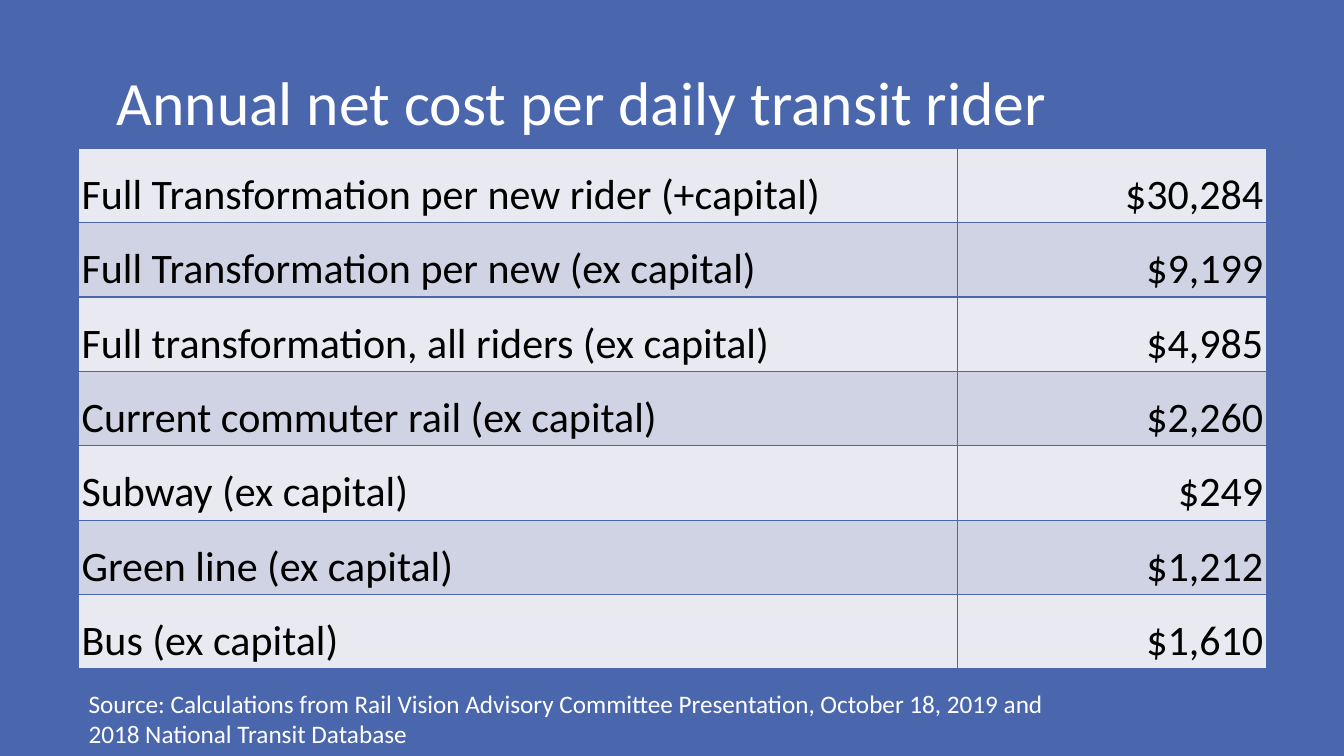
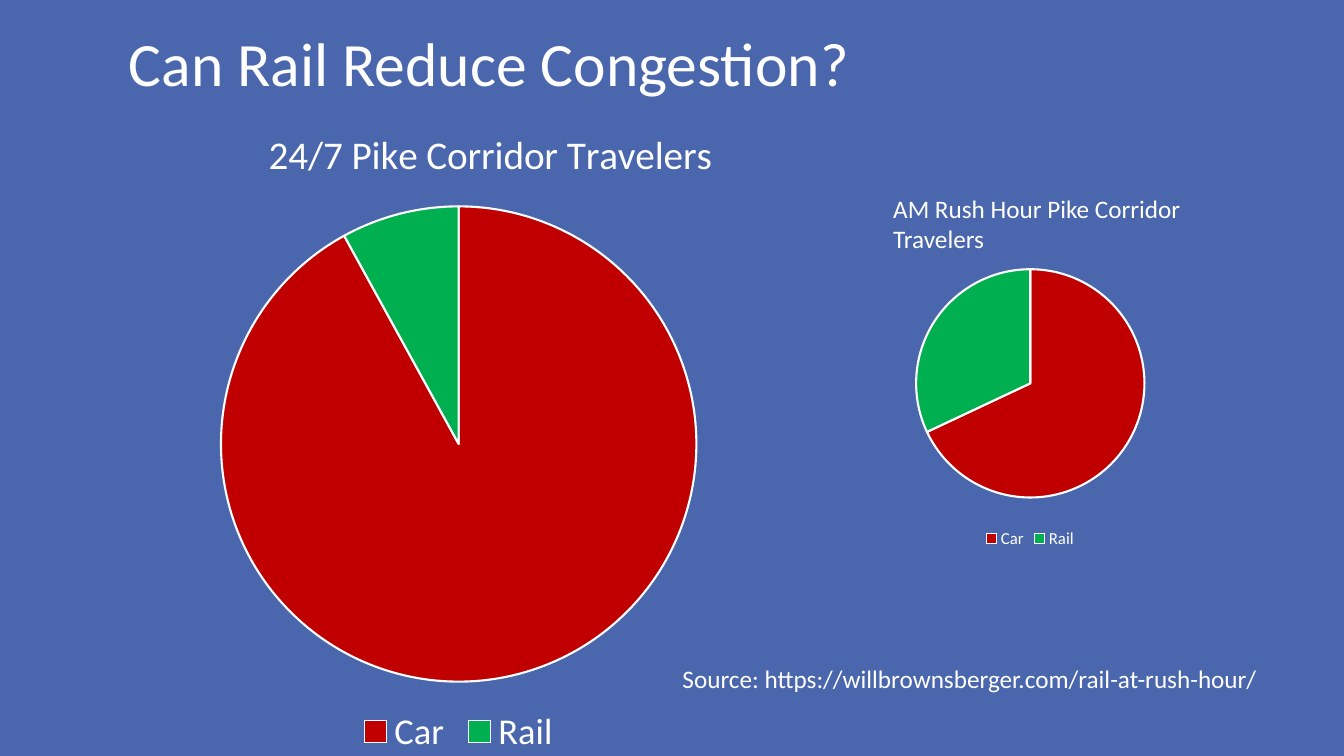
from lxml import etree
from pptx import Presentation, util as u
from pptx.chart import data
from pptx.dml.color import RGBColor
from pptx.enum import chart as ce, text
from pptx.oxml import ns

BLUE = RGBColor(0x4A, 0x66, 0xAC)
WHITE = RGBColor(0xFF, 0xFF, 0xFF)
BLACK = RGBColor(0, 0, 0)
RED = RGBColor(0xC0, 0, 0)
GREEN = RGBColor(0, 0xB0, 0x50)
BANDS = RGBColor(0xE9, 0xEA, 0xF1), RGBColor(0xD0, 0xD3, 0xE3)
FONT = "Calibri"
WIDE, HIGH = u.Inches(13.33), u.Inches(7.5)

COSTS = [
    ("Full Transformation per new rider (+capital)", "$30,284"),
    ("Full Transformation per new (ex capital)", "$9,199"),
    ("Full transformation, all riders (ex capital)", "$4,985"),
    ("Current commuter rail (ex capital)", "$2,260"),
    ("Subway (ex capital)", "$249"),
    ("Green line (ex capital)", "$1,212"),
    ("Bus (ex capital)", "$1,610"),
]


def place(x, y, w, h):
    """Turn percentages of the slide into lengths."""
    return [int(n * full / 100) for n, full in zip((x, y, w, h), (WIDE, HIGH) * 2)]


def style(font, size, color=WHITE):
    font.name, font.size = FONT, u.Pt(size)
    font.color.rgb = color


def label(slide, box, lines, size=18, wrap=True):
    frame = slide.shapes.add_textbox(*place(*box)).text_frame
    frame.word_wrap = wrap
    frame.text = lines
    for para in frame.paragraphs:
        style(para.font, size)
    return frame


def title(slide, x, y, words):
    frame = label(slide, (x, y, 86.27, 19.33), words, 44)
    frame.vertical_anchor = text.MSO_ANCHOR.MIDDLE
    frame.paragraphs[0].line_spacing = 0.9


def border(cell, color):
    props = cell._tc.get_or_add_tcPr()
    for side in "LRTB":
        line = etree.SubElement(props, ns.qn(f"a:ln{side}"), w=str(u.Pt(1)))
        fill = etree.SubElement(line, ns.qn("a:solidFill"))
        etree.SubElement(fill, ns.qn("a:srgbClr"), val=str(color))


def cost_table(slide, box):
    x, y, w, h = place(*box)
    grid = slide.shapes.add_table(len(COSTS), 2, x, y, w, h).table
    grid.first_row = False
    for col, share in zip(grid.columns, (0.74, 0.26)):
        col.width = int(w * share)
    for r, row in enumerate(COSTS):
        for c, words in enumerate(row):
            cell = grid.cell(r, c)
            border(cell, BLUE)
            cell.fill.solid()
            cell.fill.fore_color.rgb = BANDS[r % 2]
            cell.margin_left = cell.margin_right = u.Inches(0.03)
            cell.margin_top = cell.margin_bottom = u.Inches(0.02)
            cell.vertical_anchor = text.MSO_ANCHOR.BOTTOM
            cell.text = words
            para = cell.text_frame.paragraphs[0]
            para.alignment = text.PP_ALIGN.RIGHT if c else text.PP_ALIGN.LEFT
            style(para.font, 30, BLACK)


def layout(parent, index, **shares):
    """Fix a chart part at shares of the chart's own box."""
    for old in parent.findall(ns.qn("c:layout")):
        parent.remove(old)
    node = etree.Element(ns.qn("c:layout"))
    parent.insert(index, node)
    manual = etree.SubElement(node, ns.qn("c:manualLayout"))
    if "w" in shares:
        etree.SubElement(manual, ns.qn("c:layoutTarget"), val="inner")
    for key in "xy":
        etree.SubElement(manual, ns.qn(f"c:{key}Mode"), val="edge")
    for key, share in shares.items():
        etree.SubElement(manual, ns.qn(f"c:{key}"), val=str(share))


def pie(slide, box, values, size, plot, head=None):
    info = data.CategoryChartData()
    info.categories = ["Car", "Rail"]
    info.add_series("Series 1", values)
    chart = slide.shapes.add_chart(ce.XL_CHART_TYPE.PIE, *place(*box), info).chart
    style(chart.font, 10)
    # Heading
    chart.has_title = bool(head)
    if head:
        frame = chart.chart_title.text_frame
        frame.text = head
        font = frame.paragraphs[0].runs[0].font
        style(font, 28)
        font.bold = False
        layout(chart.chart_title.element, 1, x=0.21, y=0.03)
    # Legend
    chart.has_legend = True
    chart.legend.position = ce.XL_LEGEND_POSITION.BOTTOM
    chart.legend.include_in_layout = False
    style(chart.legend.font, size)
    # Wedges
    chart.plots[0].vary_by_categories = True
    for i, color in enumerate((RED, GREEN)):
        part = chart.plots[0].series[0].points[i].format
        part.fill.solid()
        part.fill.fore_color.rgb = color
        part.line.color.rgb = WHITE
        part.line.width = u.Pt(1.5)
    layout(chart.element.find(".//" + ns.qn("c:plotArea")), 0, **plot)


def cost_slide(slide):
    title(slide, 7.95, 4.27, "Annual net cost per daily transit rider")
    label(slide, (5.85, 90.4, 73.8, 9.47),
          "Source: Calculations from Rail Vision Advisory Committee Presentation, "
          "October 18, 2019 and\n2018 National Transit Database", wrap=False)
    cost_table(slide, (5.85, 19.6, 88.37, 68.93))


def rail_slide(slide):
    title(slide, 8.85, -0.8, "Can Rail Reduce Congestion?")
    pie(slide, (8.85, 13.33, 50.56, 87.33), (92, 8), 26,
        dict(x=0.15, y=0.16, w=0.7, h=0.72), "24/7 Pike Corridor Travelers")
    pie(slide, (67.14, 32.8, 19.05, 40.27), (68, 32), 12,
        dict(x=0.05, y=0.07, w=0.9, h=0.75))
    label(slide, (65.72, 24.93, 27.31, 9.47), "AM Rush Hour Pike Corridor Travelers")
    label(slide, (50.04, 87.07, 47.26, 5.33),
          "Source: https://willbrownsberger.com/rail-at-rush-hour/")


def main():
    deck = Presentation()
    deck.slide_width, deck.slide_height = WIDE, HIGH
    back = deck.slide_master.background.fill
    back.solid()
    back.fore_color.rgb = BLUE
    for build in (cost_slide, rail_slide):
        build(deck.slides.add_slide(deck.slide_layouts[6]))
    deck.save("out.pptx")


if __name__ == "__main__":
    main()
